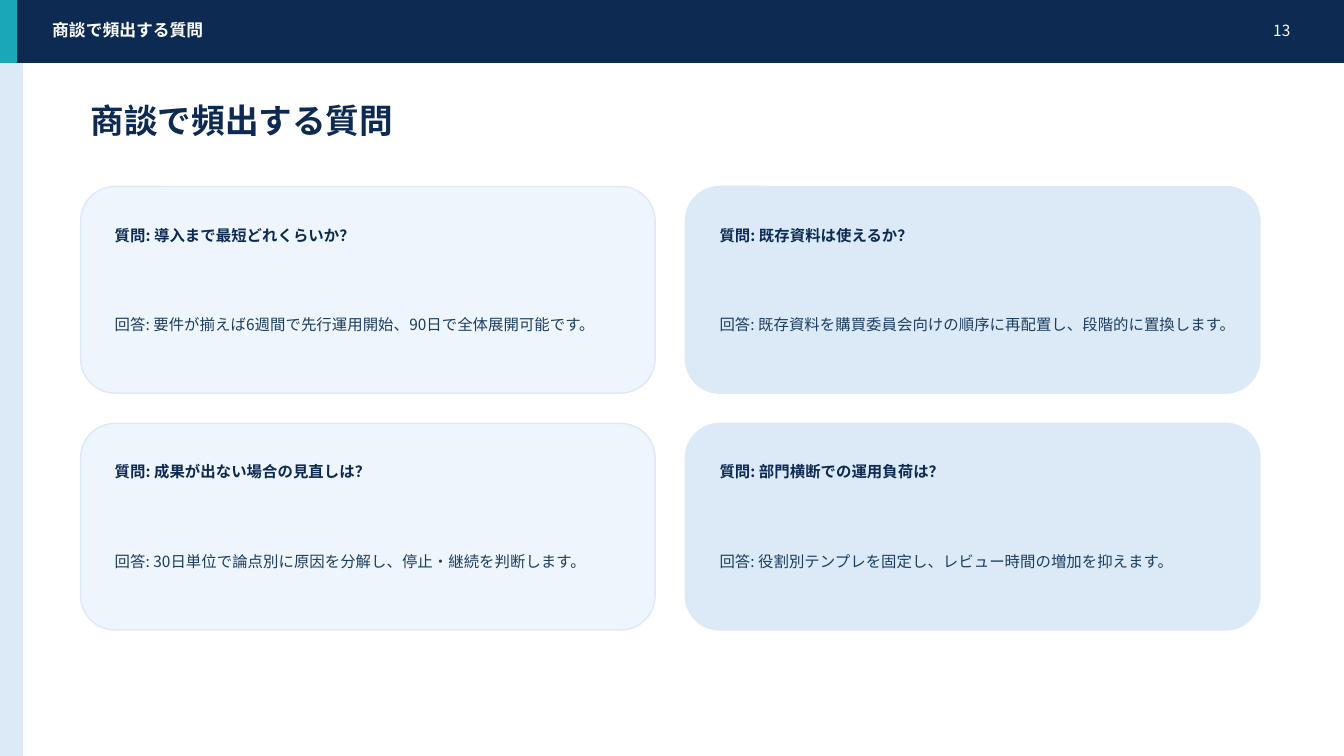
from lxml.etree import SubElement
from pptx import Presentation
from pptx.dml.color import RGBColor
from pptx.enum.shapes import MSO_SHAPE
from pptx.enum.text import MSO_ANCHOR, MSO_AUTO_SIZE, PP_ALIGN
from pptx.oxml.ns import qn
from pptx.util import Pt

COLORS = {
    "navy": "0D2A52",
    "teal": "1AA8B8",
    "pale": "DCEAF7",
    "ice": "EEF5FC",
    "body": "1C3E5E",
    "white": "FFFFFF",
}
TITLE = "商談で頻出する質問"
QUESTIONS = [
    ("導入まで最短どれくらいか？",
     "要件が揃えば6週間で先行運用開始、90日で全体展開可能です。"),
    ("既存資料は使えるか？",
     "既存資料を購買委員会向けの順序に再配置し、段階的に置換します。"),
    ("成果が出ない場合の見直しは？",
     "30日単位で論点別に原因を分解し、停止・継続を判断します。"),
    ("部門横断での運用負荷は？",
     "役割別テンプレを固定し、レビュー時間の増加を抑えます。"),
]


class SlideBuilder:
    """Holds the style and the current slide, and adds elements to it."""

    def __init__(self, slide, font, colors):
        """Keep the slide, the font name and the colours."""
        self.s = slide
        self.font = font
        self.colors = colors

    def color(self, name):
        """Return the named colour."""
        return RGBColor.from_string(self.colors[name])

    def shape(self, kind, x, y, w, h, fill, line):
        """Add a filled preset shape with a thin outline."""
        sp = self.s.shapes.add_shape(kind, Pt(x), Pt(y), Pt(w), Pt(h))
        sp.shadow.inherit = False
        sp.fill.solid()
        sp.fill.fore_color.rgb = self.color(fill)
        sp.line.color.rgb = self.color(line)
        sp.line.width = Pt(1)

    def set_text(self, sp, text, size, color, bold=False, align=PP_ALIGN.LEFT):
        """Put one formatted paragraph into a shape."""
        tf = sp.text_frame
        tf.text = text
        tf.word_wrap = True
        tf.auto_size = MSO_AUTO_SIZE.NONE
        tf.vertical_anchor = MSO_ANCHOR.MIDDLE
        p = tf.paragraphs[0]
        p.alignment = align
        r = p.runs[0]
        r.font.size = Pt(size)
        r.font.bold = bold
        r.font.name = self.font
        r.font.color.rgb = self.color(color)
        SubElement(r._r.get_or_add_rPr(), qn("a:ea"), typeface=self.font)

    def text(self, x, y, w, h, text, size, color, **style):
        """Add a text box."""
        sp = self.s.shapes.add_textbox(Pt(x), Pt(y), Pt(w), Pt(h))
        self.set_text(sp, text, size, color, **style)

    def title(self, x, y, w, h, text):
        """Move and fill the title placeholder."""
        sp = self.s.shapes.title
        sp.left, sp.top, sp.width, sp.height = Pt(x), Pt(y), Pt(w), Pt(h)
        self.set_text(sp, text, 24, "navy", bold=True)

    def card(self, x, y, fill, question, answer):
        """Add a rounded card with a question and its answer."""
        self.shape(MSO_SHAPE.ROUNDED_RECTANGLE, x, y, 410.4, 147.6, fill, "pale")
        self.text(x + 17.28, y + 17.28, 374.4, 34.56, f"質問: {question}",
                  11, "navy", bold=True)
        self.text(x + 17.28, y + 59.04, 374.4, 79.2, f"回答: {answer}",
                  11, "body")


def main():
    """Build and save the slide."""
    prs = Presentation()
    prs.slide_width, prs.slide_height = Pt(960), Pt(540)
    s = prs.slides.add_slide(prs.slide_layouts[5])
    b = SlideBuilder(s, "Noto Sans CJK JP", COLORS)

    b.shape(MSO_SHAPE.RECTANGLE, 0, 39.6, 15.84, 500.4, "pale", "pale")
    b.shape(MSO_SHAPE.RECTANGLE, 0, 0, 960, 44.64, "navy", "navy")
    b.shape(MSO_SHAPE.RECTANGLE, 0, 0, 11.52, 44.64, "teal", "teal")
    b.text(30.24, 12.24, 633.6, 18.72, TITLE, 12, "white", bold=True)
    b.text(874.8, 12.24, 54, 18.72, "13", 11, "white", align=PP_ALIGN.RIGHT)
    b.title(57.6, 68.4, 820.8, 34.56, TITLE)

    for i, (question, answer) in enumerate(QUESTIONS):
        row, col = divmod(i, 2)
        b.card(57.6 + col * 432, 133.2 + row * 169.2,
               ("ice", "pale")[col], question, answer)

    prs.save("out.pptx")


if __name__ == "__main__":
    main()
